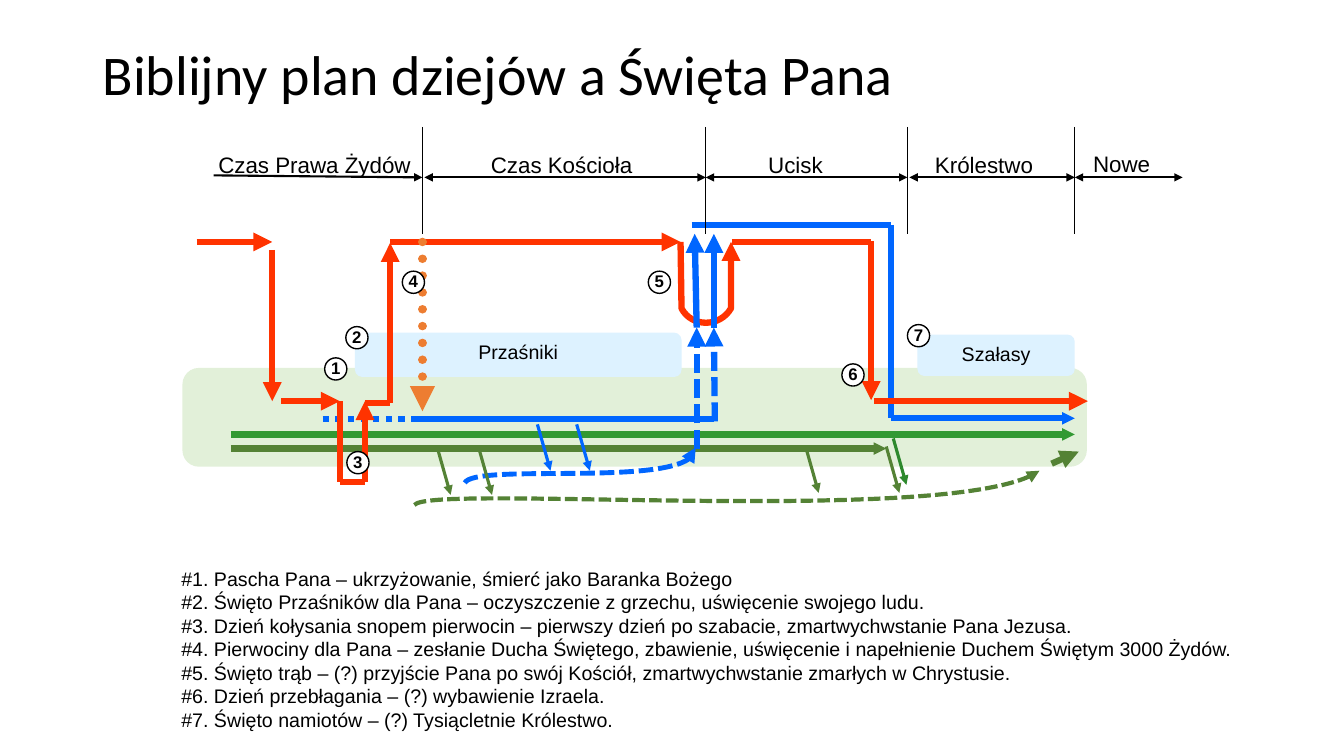
from lxml import etree
from pptx import Presentation
from pptx.dml.color import RGBColor
from pptx.enum.dml import MSO_LINE
from pptx.enum.shapes import MSO_CONNECTOR, MSO_SHAPE
from pptx.enum.text import MSO_ANCHOR, PP_ALIGN
from pptx.oxml.ns import qn
from pptx.util import Cm, Pt

BLACK = RGBColor(0, 0, 0)
WHITE = RGBColor(255, 255, 255)
RED = RGBColor(0xFF, 0x33, 0x00)
BLUE = RGBColor(0x00, 0x66, 0xFF)
GREEN = RGBColor(0x33, 0x99, 0x33)
LEAF = RGBColor(0x2D, 0x89, 0x2D)
OLIVE = RGBColor(0x54, 0x82, 0x35)
ORANGE = RGBColor(0xED, 0x7D, 0x31)
PALE = RGBColor(0xE2, 0xF0, 0xD9)
SKY = RGBColor(0xDD, 0xF2, 0xFF)

ROUND = MSO_SHAPE.ROUNDED_RECTANGLE
OVAL = MSO_SHAPE.OVAL
LINE = MSO_CONNECTOR.STRAIGHT
DOT = MSO_LINE.ROUND_DOT
DASH = MSO_LINE.SQUARE_DOT
TOP = MSO_ANCHOR.TOP
MIDDLE = MSO_ANCHOR.MIDDLE
LEFT = PP_ALIGN.LEFT
CENTER = PP_ALIGN.CENTER

TITLE = "Biblijny plan dziejów a Święta Pana"
NOTES = [
    "#1. Pascha Pana – ukrzyżowanie, śmierć jako Baranka Bożego",
    "#2. Święto Przaśników dla Pana – oczyszczenie z grzechu, uświęcenie swojego ludu.",
    "#3. Dzień kołysania snopem pierwocin – pierwszy dzień po szabacie, zmartwychwstanie Pana Jezusa.",
    "#4. Pierwociny dla Pana – zesłanie Ducha Świętego, zbawienie, uświęcenie i napełnienie "
    "Duchem Świętym 3000 Żydów.",
    "#5. Święto trąb – (?) przyjście Pana po swój Kościół, zmartwychwstanie zmarłych w Chrystusie.",
    "#6. Dzień przebłagania – (?) wybawienie Izraela.",
    "#7. Święto namiotów – (?) Tysiącletnie Królestwo.",
]
ERAS = [
    ("Czas Prawa Żydów", 2.04, 1.46, 2.16, (2.12, 1.74, 4.19, 1.76), "tail"),
    ("Czas Kościoła", 4.61, 1.46, 1.92, (4.21, 1.76, 7, 1.76), "both"),
    ("Ucisk", 7.32, 1.46, 1.14, (7, 1.76, 9, 1.76), "both"),
    ("Królestwo", 9.14, 1.46, 1.24, (9.02, 1.76, 10.66, 1.76), "both"),
    ("Nowe", 10.66, 1.45, 0.93, (10.66, 1.76, 11.73, 1.76), "both"),
]
BADGES = [(3.22, 3.55), (3.43, 3.24), (3.44, 4.48), (3.99, 2.69),
          (6.43, 2.69), (8.35, 3.61), (9, 3.22)]
SLANTS = [(4.34, 4.45, OLIVE), (4.75, 4.45, OLIVE), (7.99, 4.43, OLIVE),
          (8.79, 4.43, OLIVE), (8.86, 4.35, LEAF), (5.33, 4.21, BLUE), (5.72, 4.21, BLUE)]
STEPS = [
    ((1.95, 2.4, 2.7, 2.4), "tail"),
    ((2.7, 2.48, 2.7, 3.98), "tail"),
    ((2.79, 3.98, 3.37, 3.98), "tail"),
    ((3.37, 3.98, 3.37, 4.78), ""),
    ((3.37, 4.78, 3.62, 4.78), ""),
    ((3.62, 4.78, 3.62, 3.98), "tail"),
    ((3.62, 4, 3.87, 4), ""),
    ((3.87, 4, 3.87, 2.41), "tail"),
    ((3.87, 2.4, 6.75, 2.4), "tail"),
    ((7.26, 2.4, 8.64, 2.4), ""),
    ((8.64, 2.39, 8.64, 3.97), "tail"),
    ((8.67, 3.98, 10.79, 3.98), "tail"),
]
RISES = [
    ((7.08, 3.25, 7.08, 2.32), None),
    ((6.91, 3.25, 6.89, 2.32), None),
    ((6.91, 4.45, 6.91, 3.25), DASH),
    ((7.09, 4.18, 7.08, 3.25), DASH),
]


def cm(inch):
    return Cm(inch * 2.54)


class Chart:
    font = "Arial"

    def __init__(self, slide):
        self.shapes = slide.shapes

    def label(self, shape, lines, size, font=None, bold=False, align=LEFT,
              anchor=TOP, wrap=True, inset=None, space=None):
        frame = shape.text_frame
        frame.word_wrap = wrap
        frame.vertical_anchor = anchor
        if inset is not None:
            frame.margin_left = frame.margin_right = cm(inset)
            frame.margin_top = frame.margin_bottom = cm(inset)
        for i, line in enumerate(lines):
            para = frame.add_paragraph() if i else frame.paragraphs[0]
            para.text = line
            para.alignment = align
            para.line_spacing = space
            para.font.name = font or self.font
            para.font.size = Pt(size)
            para.font.bold = bold
            para.font.color.rgb = BLACK

    def text(self, box, lines, size, **style):
        self.label(self.shapes.add_textbox(*map(cm, box)), lines, size, **style)

    def block(self, kind, box, fill, edge=None):
        shape = self.shapes.add_shape(kind, *map(cm, box))
        shape.shadow.inherit = False
        shape.fill.solid()
        shape.fill.fore_color.rgb = fill
        if edge is None:
            shape.line.fill.background()
        else:
            self.stroke(shape, edge, 1)
        return shape

    def stroke(self, shape, color, width, dash=None, ends="", head="med", cap=None):
        shape.line.color.rgb = color
        shape.line.width = Pt(width)
        if dash is not None:
            shape.line.dash_style = dash
        ln = shape.element.spPr.find(qn("a:ln"))
        if cap:
            ln.set("cap", cap)
        for side in ("head", "tail"):
            if ends in (side, "both"):
                etree.SubElement(ln, qn(f"a:{side}End"), type="triangle", w=head, len=head)

    def line(self, route, color, width, **style):
        link = self.shapes.add_connector(LINE, *map(cm, route))
        self.stroke(link, color, width, **style)
        etree.SubElement(link.element.spPr, qn("a:effectLst"))

    def curve(self, points, bends, color, width, **style):
        spots = [(cm(x), cm(y)) for x, y in points]
        pen = self.shapes.build_freeform(*spots[0])
        pen.add_line_segments(spots[1:], close=False)
        shape = pen.convert_to_shape()
        shape.shadow.inherit = False
        shape.fill.background()
        steps = list(shape.element.iter(qn("a:lnTo")))
        for index, pulls in bends.items():
            step = steps[index]
            bend = etree.Element(qn("a:cubicBezTo"))
            for x, y in pulls:
                etree.SubElement(bend, qn("a:pt"), x=str(cm(x) - shape.left), y=str(cm(y) - shape.top))
            bend.append(step[0])
            step.getparent().replace(step, bend)
        self.stroke(shape, color, width, **style)


def main():
    deck = Presentation()
    deck.slide_width, deck.slide_height = cm(13.33), cm(7.5)
    chart = Chart(deck.slides.add_slide(deck.slide_layouts[6]))

    chart.text((0.92, 0.4, 11.5, 0.73), [TITLE], 40, font="Calibri", anchor=MIDDLE, space=0.9)
    chart.block(ROUND, (1.81, 3.65, 8.97, 0.98), PALE)
    for name, box in (("Szałasy", (9.1, 3.32, 1.56, 0.41)), ("Przaśniki", (3.52, 3.3, 3.24, 0.44))):
        chart.label(chart.block(ROUND, box, SKY), [name], 14, align=CENTER, wrap=False)

    chart.line((2.29, 4.45, 8.79, 4.45), OLIVE, 4.5, ends="tail", head="sm")
    chart.line((4.11, 4.16, 7.08, 4.16), BLUE, 4.5)
    chart.line((2.29, 4.31, 10.66, 4.31), GREEN, 4.5, ends="tail", head="sm")
    chart.line((3.2, 4.16, 4.37, 4.16), BLUE, 4.5, dash=DOT)
    chart.line((6.86, 2.23, 8.84, 2.23), BLUE, 4.5)
    chart.line((8.84, 2.23, 8.84, 4.15), BLUE, 4.5)
    chart.line((8.84, 4.15, 10.66, 4.15), BLUE, 4.5, ends="tail", head="sm")
    for route, ends in STEPS:
        chart.line(route, RED, 4.5, ends=ends)
    chart.curve([(6.75, 2.4), (6.76, 3.06), (7.25, 3.06), (7.25, 2.4)],
                {1: [(6.86, 3.25), (7.14, 3.25)]}, RED, 4.5, ends="tail")
    chart.line((4.19, 2.4, 4.19, 4.08), ORANGE, 6, dash=DOT, ends="tail", cap="rnd")
    for route, dash in RISES:
        chart.line(route, BLUE, 4.5, dash=dash, ends="tail")

    chart.curve([(4.61, 4.79), (6.9, 4.44)], {0: [(4.7, 4.6), (6.91, 4.86)]},
                BLUE, 3.5, dash=DASH, ends="tail")
    chart.curve([(4.11, 5.01), (10.31, 4.67)], {0: [(4.25, 4.8), (9.53, 5.23)]},
                OLIVE, 3, dash=DASH, ends="tail")
    chart.line((10.43, 4.6, 10.7, 4.48), OLIVE, 4.5, ends="tail")
    for x, y, color in SLANTS:
        chart.line((x, y, x + 0.13, y + 0.46), color, 2.25, ends="tail")

    for x in (4.19, 7, 9, 10.66):
        chart.line((x, 1.26, x, 2.32), BLACK, 0.5)
    for name, left, top, width, span, ends in ERAS:
        chart.line(span, BLACK, 1.5, ends=ends)
        chart.text((left, top, width, 0.35), [name], 16, align=CENTER, anchor=MIDDLE, inset=0.04)
    for number, (x, y) in enumerate(BADGES, 1):
        badge = chart.block(OVAL, (x, y, 0.22, 0.22), WHITE, BLACK)
        chart.label(badge, [str(number)], 12, bold=True, align=CENTER,
                    anchor=MIDDLE, wrap=False, space=0.9)
    chart.text((1.7, 5.57, 10.87, 1.75), NOTES, 14)

    deck.save("out.pptx")


if __name__ == "__main__":
    main()
